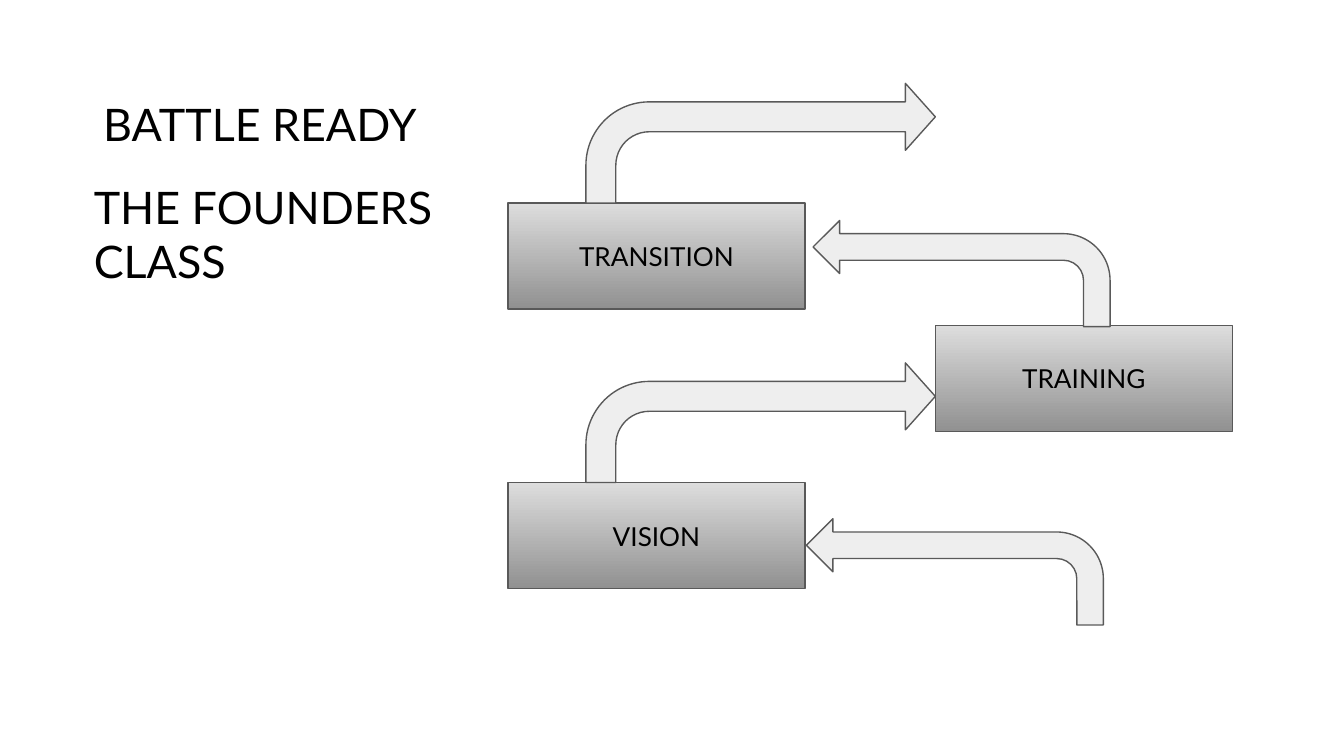
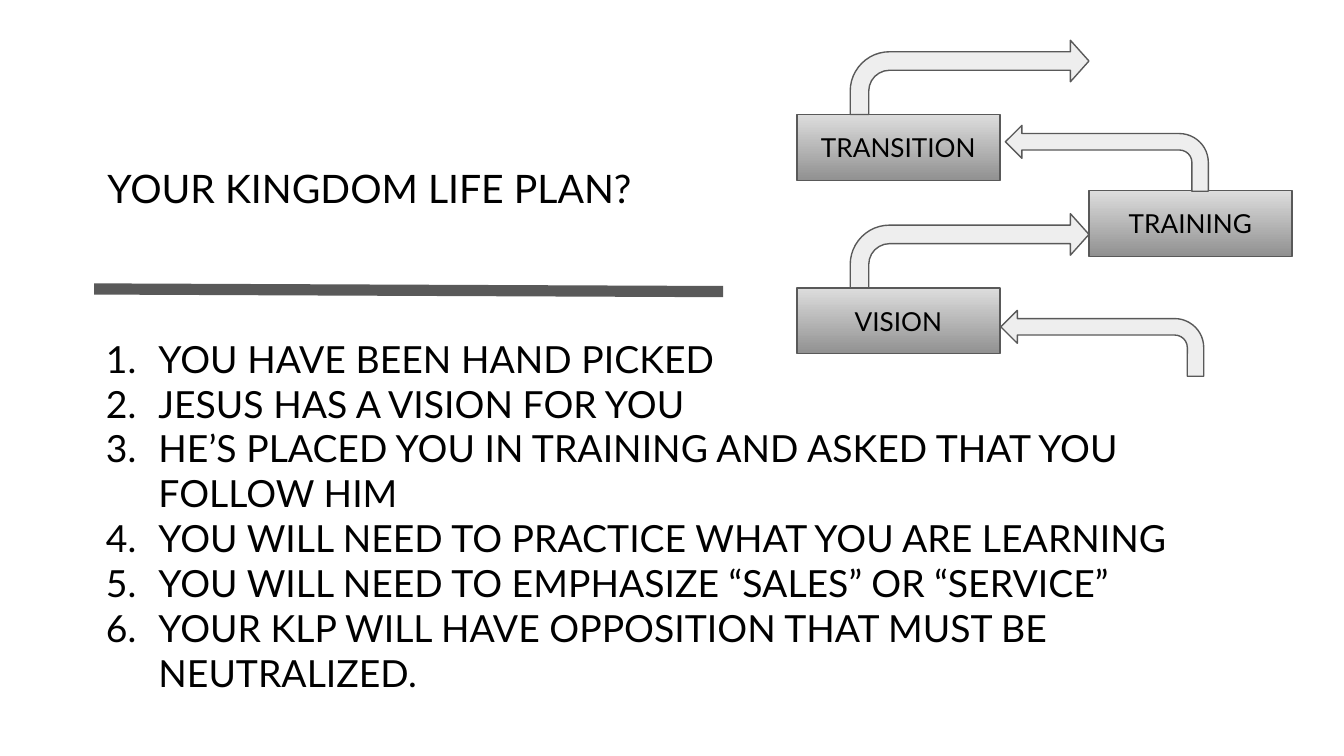
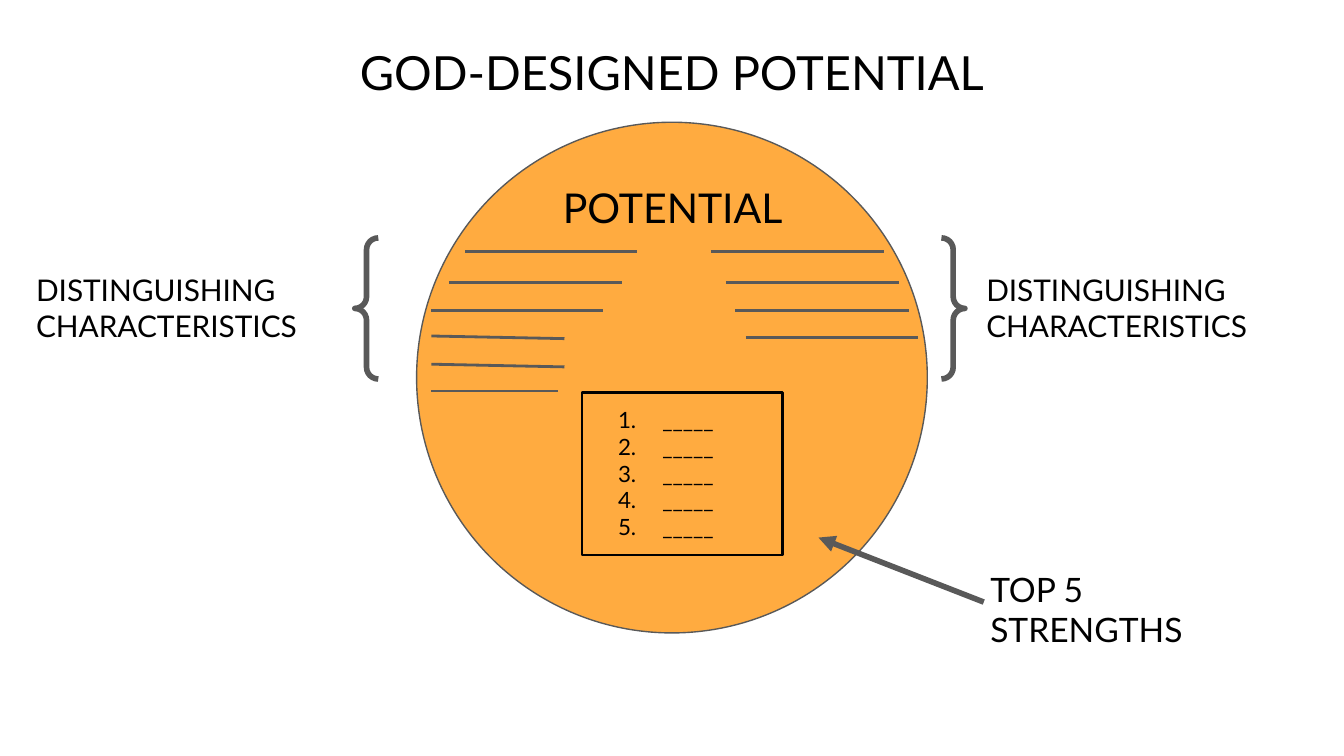
from lxml import etree
from pptx import Presentation
from pptx.dml.color import RGBColor
from pptx.enum import shapes, text
from pptx.oxml import ns
from pptx.util import Inches, Pt

FONT = "Lato"
COLORS = {
    "ink": "000000",
    "rule": "595959",
    "box_top": "DDDDDD",
    "box_bottom": "919191",
    "arrow": "EEEEEE",
    "circle": "FFAB40",
}

# Staircase diagram: offsets from its top left corner, at full size
STEP_SIZE = (2.21, 0.79)
STEPS = [("VISION", 0, 2.97), ("TRANSITION", 0, 0.89), ("TRAINING", 3.18, 1.8)]
BACK_ARROW = {"size": (2.21, 0.79), "adjust": (0.25, 0.25, 0.25, 0.44), "flip": True}
FORWARD_ARROW = {"size": (2.6, 0.89), "adjust": (0.25, 0.28, 0.25, 0.53), "flip": False}
ARROWS = [
    (BACK_ARROW, 2.27, 1.02),
    (FORWARD_ARROW, 0.58, 2.08),
    (BACK_ARROW, 2.22, 3.24),
    (FORWARD_ARROW, 0.58, 0),
]

LIFE_PLAN = [
    "YOU HAVE BEEN HAND PICKED",
    "JESUS HAS A VISION FOR YOU",
    "HE’S PLACED YOU IN TRAINING AND ASKED THAT YOU FOLLOW HIM",
    "YOU WILL NEED TO PRACTICE WHAT YOU ARE LEARNING",
    "YOU WILL NEED TO EMPHASIZE “SALES” OR “SERVICE”",
    "YOUR KLP WILL HAVE OPPOSITION THAT MUST BE NEUTRALIZED.",
]

# Blank lines for characteristics: left, top, width, drop
LEFT_BLANKS = [
    (3.46, 1.87, 1.28, 0), (3.34, 2.1, 1.29, 0), (3.21, 2.31, 1.28, 0),
    (3.21, 2.5, 0.99, 0.02), (3.21, 2.71, 0.99, 0.02), (3.21, 2.91, 0.94, 0),
]
RIGHT_BLANKS = [
    (5.29, 1.87, 1.29, 0), (5.4, 2.1, 1.29, 0),
    (5.47, 2.31, 1.29, 0), (5.55, 2.51, 1.28, 0),
]
CHARACTERISTICS = ["DISTINGUISHING", "CHARACTERISTICS"]
STRENGTHS = ["_____"] * 5


def color(name):
    return RGBColor.from_string(COLORS[name])


def add_number(para, hanging):
    props = para._p.get_or_add_pPr()
    props.set("marL", str(Inches(0.5)))
    props.set("indent", str(-Inches(hanging)))
    tint = etree.SubElement(props, ns.qn("a:buClr"))
    etree.SubElement(tint, ns.qn("a:srgbClr"), val=COLORS["ink"])
    etree.SubElement(props, ns.qn("a:buAutoNum"), type="arabicPeriod")


def write(shape, lines, size, align=text.PP_ALIGN.LEFT,
          anchor=text.MSO_ANCHOR.TOP, grow=True, hanging=None):
    frame = shape.text_frame
    frame.word_wrap = True
    frame.vertical_anchor = anchor
    frame.auto_size = (text.MSO_AUTO_SIZE.SHAPE_TO_FIT_TEXT if grow
                       else text.MSO_AUTO_SIZE.NONE)
    frame.margin_left = frame.margin_right = Inches(0.1)
    frame.margin_top = frame.margin_bottom = Inches(0.1)
    for index, line in enumerate(lines):
        para = frame.add_paragraph() if index else frame.paragraphs[0]
        para.text = line
        para.alignment = align
        if hanging:
            add_number(para, hanging)
        para.font.name = FONT
        para.font.size = Pt(size)
        para.font.color.rgb = color("ink")


def add_text(page, place, lines, size, **options):
    box = page.shapes.add_textbox(*map(Inches, place))
    write(box, lines, size, **options)


def add_outlined(page, kind, place, fill=None, line="rule", width=0.75):
    shape = page.shapes.add_shape(kind, *map(Inches, place))
    shape.shadow.inherit = False
    if fill:
        shape.fill.solid()
        shape.fill.fore_color.rgb = color(fill)
    else:
        shape.fill.background()
    shape.line.color.rgb = color(line)
    shape.line.width = Pt(width)
    return shape


def add_rule(page, start, end, width, arrow=False):
    rule = page.shapes.add_connector(
        shapes.MSO_CONNECTOR.STRAIGHT, *map(Inches, start + end))
    rule.line.color.rgb = color("rule")
    rule.line.width = Pt(width)
    if arrow:
        etree.SubElement(rule.line._get_or_add_ln(), ns.qn("a:tailEnd"), type="triangle")
    etree.SubElement(rule._element.spPr, ns.qn("a:effectLst"))


def add_staircase(page, left, top, scale_x=1, scale_y=1):
    def place(x, y, size):
        return (left + x * scale_x, top + y * scale_y,
                size[0] * scale_x, size[1] * scale_y)

    for label, x, y in STEPS:
        step = add_outlined(page, shapes.MSO_SHAPE.RECTANGLE, place(x, y, STEP_SIZE))
        step.fill.gradient()
        step.fill.gradient_angle = 270
        for stop, name, position in zip(
                step.fill.gradient_stops, ("box_top", "box_bottom"), (0, 1)):
            stop.color.rgb = color(name)
            stop.position = position
        write(step, [label], 14, align=text.PP_ALIGN.CENTER,
              anchor=text.MSO_ANCHOR.MIDDLE, grow=False)
    for style, x, y in ARROWS:
        arrow = add_outlined(page, shapes.MSO_SHAPE.BENT_ARROW,
                             place(x, y, style["size"]), fill="arrow")
        for index, value in enumerate(style["adjust"]):
            arrow.adjustments[index] = value
        if style["flip"]:
            arrow._element.spPr.xfrm.set("flipH", "1")


def build_founders(page):
    add_staircase(page, 3.78, 0.62)
    add_text(page, (0.67, 0.62, 8.8, 0.61), ["BATTLE READY"], 24)
    add_text(page, (0.6, 1.24, 8.8, 1.01), ["THE FOUNDERS", "CLASS"], 24)


def build_life_plan(page):
    add_staircase(page, 5.93, 0.3, 1.51 / 2.21, 0.49 / 0.79)
    add_text(page, (0.7, 1.12, 4.68, 0.56), ["YOUR KINGDOM LIFE PLAN?"], 21)
    add_rule(page, (0.7, 2.15), (5.38, 2.17), 6)
    add_text(page, (0.58, 2.4, 8.85, 3.2), LIFE_PLAN, 20, hanging=0.39)


def build_potential(page):
    center = text.PP_ALIGN.CENTER
    add_text(page, (0.34, 0.22, 9.32, 0.63), ["GOD-DESIGNED POTENTIAL"], 25.2,
             align=center, grow=False)
    add_outlined(page, shapes.MSO_SHAPE.OVAL, (3.1, 0.91, 3.8, 3.8), fill="circle")
    add_text(page, (3.91, 1.26, 2.19, 0.57), ["POTENTIAL"], 22, align=center)
    for left, top, width, drop in LEFT_BLANKS + RIGHT_BLANKS:
        add_rule(page, (left, top), (left + width, top + drop), 1.5)

    # Numbered strengths
    card = add_outlined(page, shapes.MSO_SHAPE.RECTANGLE, (4.33, 2.92, 1.49, 1.21),
                        line="ink", width=1.5)
    write(card, STRENGTHS, 12, hanging=0.33)

    # Side labels
    add_outlined(page, shapes.MSO_SHAPE.DOUBLE_BRACE, (2.64, 1.77, 4.54, 1.05), width=3)
    for left in (0.17, 7.24):
        add_text(page, (left, 1.92, 2.41, 0.74), CHARACTERISTICS, 16)
    add_rule(page, (7.32, 4.48), (6.09, 4), 3, arrow=True)
    add_text(page, (7.27, 4.13, 2.34, 0.81), ["TOP 5", "STRENGTHS"], 18)


def main():
    deck = Presentation()
    deck.slide_width = Inches(10)
    deck.slide_height = deck.slide_width * 9 // 16
    for build in (build_founders, build_life_plan, build_potential):
        build(deck.slides.add_slide(deck.slide_layouts[6]))
    deck.save("out.pptx")


if __name__ == "__main__":
    main()
